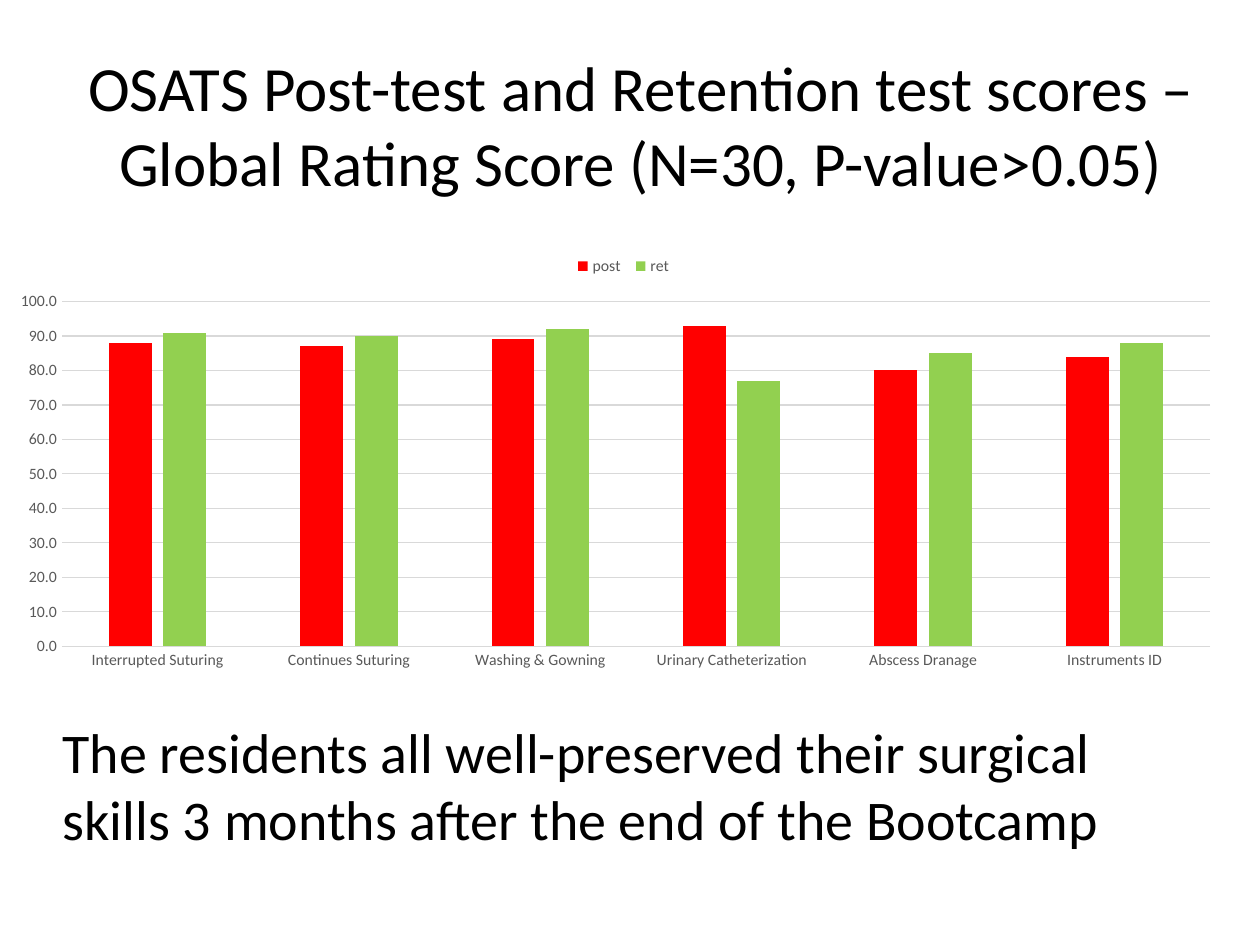
"""Build a slide comparing post-test and retention scores in a column chart."""
from lxml import etree
from pptx import Presentation
from pptx import util as u
from pptx.chart.data import CategoryChartData
from pptx.dml.color import RGBColor
from pptx.enum import chart as charts, text
from pptx.oxml.ns import qn

TITLE = "OSATS Post-test and Retention test scores – Global Rating Score (N=30, P-value>0.05)"
CONCLUSION = "The residents all well-preserved their surgical skills 3 months after the end of the Bootcamp"
SKILLS = ["Interrupted Suturing", "Continues Suturing", "Washing & Gowning",
          "Urinary Catheterization", "Abscess Dranage", "Instruments ID"]
SCORES = {"post": [88, 87, 89, 93, 80, 84], "ret": [91, 90, 92, 77, 85, 88]}
COLORS = {"text": "000000", "label": "595959", "grid": "D9D9D9", "post": "FF0000", "ret": "92D050"}
FONT = "Calibri"
PX = 914400 // 126
BOXES = {"title": (74, 45, 1134, 158), "body": (50, 711, 1134, 212), "chart": (0, 185, 1235, 507)}
PLOT_AREA = (0.05, 0.23, 0.93, 0.68)
LEGEND_AREA = (0.46, 0.13, 0.09, 0.06)


def color(name):
    return RGBColor.from_string(COLORS[name])


def box(name):
    return [value * PX for value in BOXES[name]]


def style_font(font, size, name):
    font.name, font.size, font.color.rgb = FONT, u.Pt(size), color(name)


def fill_placeholder(shape, name, content, size, alignment, anchor):
    shape.left, shape.top, shape.width, shape.height = box(name)
    frame = shape.text_frame
    frame.text = content
    frame.auto_size = text.MSO_AUTO_SIZE.NONE
    frame.vertical_anchor = anchor
    paragraph = frame.paragraphs[0]
    paragraph.alignment = alignment
    paragraph.space_before = u.Pt(0)
    style_font(paragraph.runs[0].font, size, "text")
    return paragraph


def remove_bullet(paragraph):
    properties = paragraph._p.get_or_add_pPr()
    properties.set("marL", "0")
    properties.set("indent", "0")
    etree.SubElement(properties, qn("a:buNone"))


def place(element, area, inner=False):
    for old in element.findall(qn("c:layout")):
        element.remove(old)
    layout = etree.Element(qn("c:layout"))
    manual = etree.SubElement(layout, qn("c:manualLayout"))
    settings = [("layoutTarget", "inner")] if inner else []
    settings += [("xMode", "edge"), ("yMode", "edge"), *zip("xywh", area)]
    for tag, value in settings:
        etree.SubElement(manual, qn("c:" + tag)).set("val", str(value))
    element.insert(0 if inner else 1, layout)


def style_axis(axis):
    axis.major_tick_mark = axis.minor_tick_mark = charts.XL_TICK_MARK.NONE
    style_font(axis.tick_labels.font, 9, "label")


def style_line(line):
    line.color.rgb, line.width = color("grid"), u.Pt(0.75)


def add_score_chart(slide):
    data = CategoryChartData(number_format="0.0")
    data.categories = SKILLS
    for name, values in SCORES.items():
        data.add_series(name, values)
    chart = slide.shapes.add_chart(charts.XL_CHART_TYPE.COLUMN_CLUSTERED, *box("chart"), data).chart
    style_font(chart.font, 10, "text")
    chart.has_title = False

    plot = chart.plots[0]
    plot.gap_width, plot.overlap, plot.vary_by_categories = 219, -27, False
    for series in plot.series:
        series.format.fill.solid()
        series.format.fill.fore_color.rgb = color(series.name)

    skills, scores = chart.category_axis, chart.value_axis
    style_axis(skills)
    style_axis(scores)
    style_line(skills.format.line)
    style_line(scores.major_gridlines.format.line)
    scores.format.line.fill.background()
    scores.minimum_scale, scores.maximum_scale, scores.major_unit = 0, 100, 10
    scores.tick_labels.number_format = "0.0"
    scores.tick_labels.number_format_is_linked = False
    skills.crosses = charts.XL_AXIS_CROSSES.MAXIMUM

    chart.has_legend = True
    chart.legend.position = charts.XL_LEGEND_POSITION.BOTTOM
    chart.legend.include_in_layout = False
    style_font(chart.legend.font, 9, "label")
    place(chart.legend._element, LEGEND_AREA)
    place(chart._chartSpace.chart.plotArea, PLOT_AREA, inner=True)


def main():
    presentation = Presentation()
    presentation.slide_width, presentation.slide_height = u.Inches(10), u.Inches(7.5)
    slide = presentation.slides.add_slide(presentation.slide_layouts[1])
    fill_placeholder(slide.shapes.title, "title", TITLE, 36,
                     text.PP_ALIGN.CENTER, text.MSO_ANCHOR.MIDDLE)
    conclusion = fill_placeholder(slide.placeholders[1], "body", CONCLUSION, 32,
                                  text.PP_ALIGN.LEFT, text.MSO_ANCHOR.TOP)
    remove_bullet(conclusion)
    add_score_chart(slide)
    presentation.save("out.pptx")


if __name__ == "__main__":
    main()
